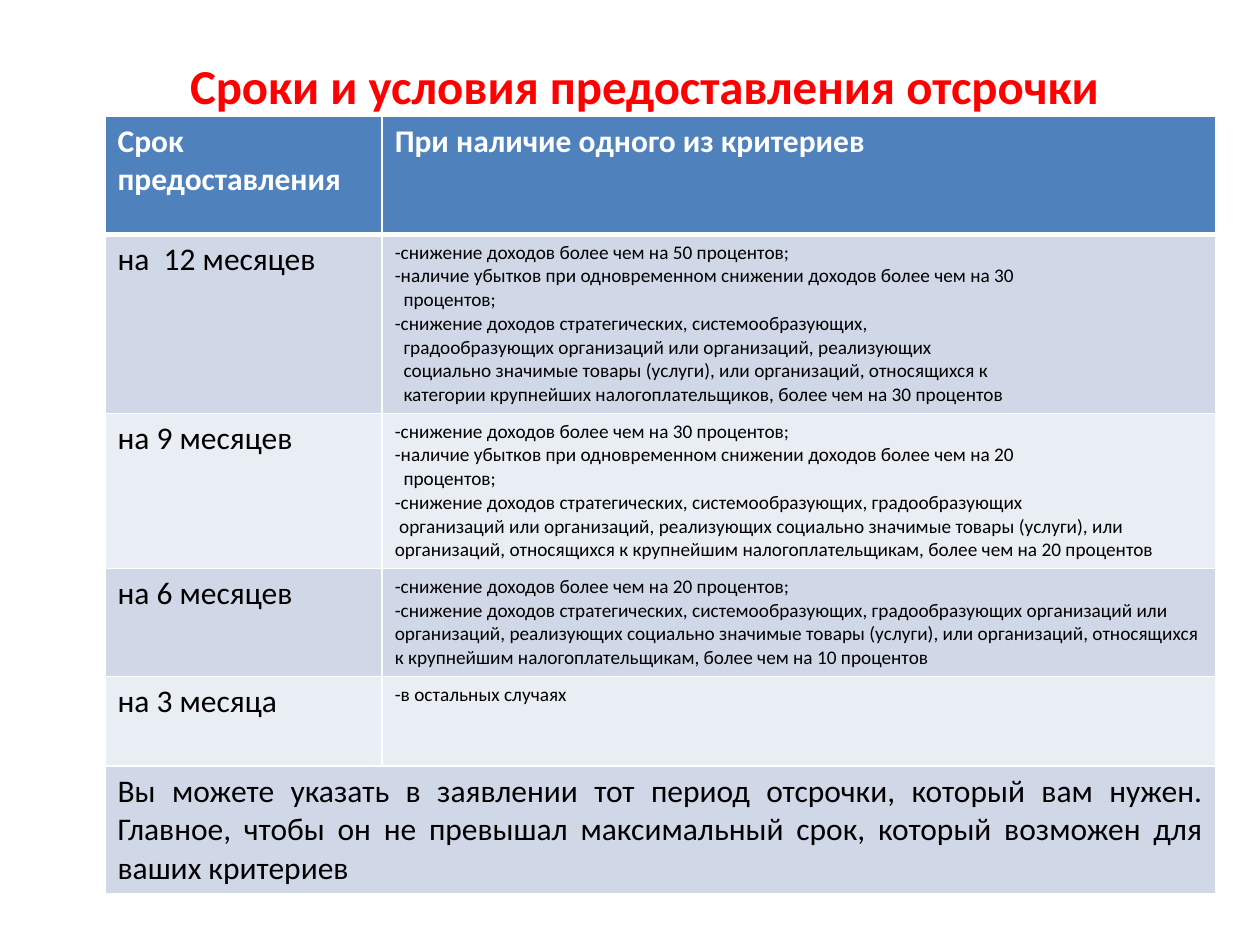
from lxml.etree import SubElement
from pptx import Presentation
from pptx.dml.color import RGBColor
from pptx.enum.text import MSO_ANCHOR, PP_ALIGN
from pptx.oxml import parse_xml
from pptx.oxml.ns import nsdecls
from pptx.util import Pt

WHITE = RGBColor(0xFF, 0xFF, 0xFF)
BLACK = RGBColor(0x00, 0x00, 0x00)
RED = RGBColor(0xFF, 0x00, 0x00)
BLUE = RGBColor(0x4F, 0x81, 0xBD)
BANDS = (RGBColor(0xD0, 0xD8, 0xE8), RGBColor(0xE9, 0xED, 0xF4))
FONT = "Calibri"

TITLE = "Сроки и условия предоставления отсрочки"
HEADER = ("Срок предоставления", "При наличие одного из критериев")
# Each criterion line: text, left margin, first-line indent
TERMS = [
    ("на  12 месяцев", [
        ("-снижение доходов более чем на 50 процентов;", 0, 0),
        ("-наличие убытков при одновременном снижении доходов более чем на 30", 0, 0),
        ("процентов;", 5, 0),
        ("-снижение доходов стратегических, системообразующих,", 0, 0),
        ("градообразующих организаций или организаций, реализующих", 5, 0),
        ("социально значимые товары (услуги), или организаций, относящихся к", 5, 0),
        ("категории крупнейших налогоплательщиков, более чем на 30 процентов", 5, 0),
    ]),
    ("на 9 месяцев", [
        ("-снижение доходов более чем на 30 процентов;", 0, 0),
        ("-наличие убытков при одновременном снижении доходов более чем на 20", 0, 0),
        ("процентов;", 5, 0),
        ("-снижение доходов стратегических, системообразующих, градообразующих", 0, 0),
        ("организаций или организаций, реализующих социально значимые товары "
         "(услуги), или организаций, относящихся к крупнейшим "
         "налогоплательщикам, более чем на 20 процентов", 0, 2.5),
    ]),
    ("на 6 месяцев", [
        ("-снижение доходов более чем на 20 процентов;", 0, 0),
        ("-снижение доходов стратегических, системообразующих, градообразующих "
         "организаций или организаций, реализующих социально значимые товары "
         "(услуги), или организаций, относящихся к крупнейшим "
         "налогоплательщикам, более чем на 10 процентов", 0, 0),
    ]),
    ("на 3 месяца", [("-в остальных случаях", 0, 0)]),
]
NOTE = ("Вы можете указать в заявлении тот период отсрочки, который вам нужен. "
        "Главное, чтобы он не превышал максимальный срок, который возможен для "
        "ваших критериев")
COL_WIDTHS = (158.4, 476.2)
ROW_HEIGHTS = (67.7, 101.7, 88.7, 61.7, 51.3, 72.5)


def style_runs(p, size, color, bold=False):
    for r in p.runs:
        r.font.name = FONT
        r.font.size = Pt(size)
        r.font.bold = bold
        r.font.color.rgb = color


def set_borders(cell, top, bottom):
    """Draw white borders; side borders are 1 pt wide."""
    tc_pr = cell._tc.get_or_add_tcPr()
    for i, (side, width) in enumerate(zip("LRTB", (1, 1, top, bottom))):
        ln = parse_xml(f'<a:ln{side} {nsdecls("a")} w="{Pt(width)}"/>')
        fill = SubElement(ln, ln.tag.split("}")[0] + "}solidFill")
        SubElement(fill, ln.tag.split("}")[0] + "}srgbClr", val=str(WHITE))
        tc_pr.insert(i, ln)


def fill_cell(cell, lines, size, color=BLACK, bold=False, align=PP_ALIGN.LEFT):
    tf = cell.text_frame
    tf.text = "\n".join(text for text, _, _ in lines)
    for p, (_, margin, indent) in zip(tf.paragraphs, lines):
        p.alignment = align
        if margin or indent:
            p_pr = p._p.get_or_add_pPr()
            p_pr.set("marL", str(Pt(margin)))
            p_pr.set("indent", str(Pt(indent)))
        style_runs(p, size, color, bold)


def add_title(slide, left, top, width, height):
    tf = slide.shapes.add_textbox(Pt(left), Pt(top), Pt(width), Pt(height)).text_frame
    tf.word_wrap = True
    tf.vertical_anchor = MSO_ANCHOR.MIDDLE
    p = tf.paragraphs[0]
    p.text = TITLE
    p.alignment = PP_ALIGN.CENTER
    style_runs(p, 27.9, RED, bold=True)


def add_terms_table(slide, left, top):
    table = slide.shapes.add_table(
        len(ROW_HEIGHTS), len(COL_WIDTHS), Pt(left), Pt(top),
        Pt(sum(COL_WIDTHS)), Pt(sum(ROW_HEIGHTS))).table
    for column, width in zip(table.columns, COL_WIDTHS):
        column.width = Pt(width)
    for i, (row, height) in enumerate(zip(table.rows, ROW_HEIGHTS)):
        row.height = Pt(height)
        for cell in row.cells:
            cell.fill.solid()
            cell.fill.fore_color.rgb = BANDS[(i - 1) % 2] if i else BLUE
            set_borders(cell, 3 if i == 1 else 1, 1 if i else 3)

    for j, text in enumerate(HEADER):
        fill_cell(table.cell(0, j), [(text, 0, 0)], 18, WHITE, bold=True)
    for i, (term, criteria) in enumerate(TERMS, 1):
        fill_cell(table.cell(i, 0), [(term, 0, 0)], 18)
        fill_cell(table.cell(i, 1), criteria, 11)
    last = len(ROW_HEIGHTS) - 1
    table.cell(last, 0).merge(table.cell(last, 1))
    fill_cell(table.cell(last, 0), [(NOTE, 0, 0)], 18, align=PP_ALIGN.JUSTIFY)


def main():
    prs = Presentation()
    prs.slide_width, prs.slide_height = Pt(720), Pt(540)
    slide = prs.slides.add_slide(prs.slide_layouts[6])
    add_terms_table(slide, 60, 66.2)
    add_title(slide, 64.8, 29, 607, 39.6)
    prs.save("out.pptx")


if __name__ == "__main__":
    main()
